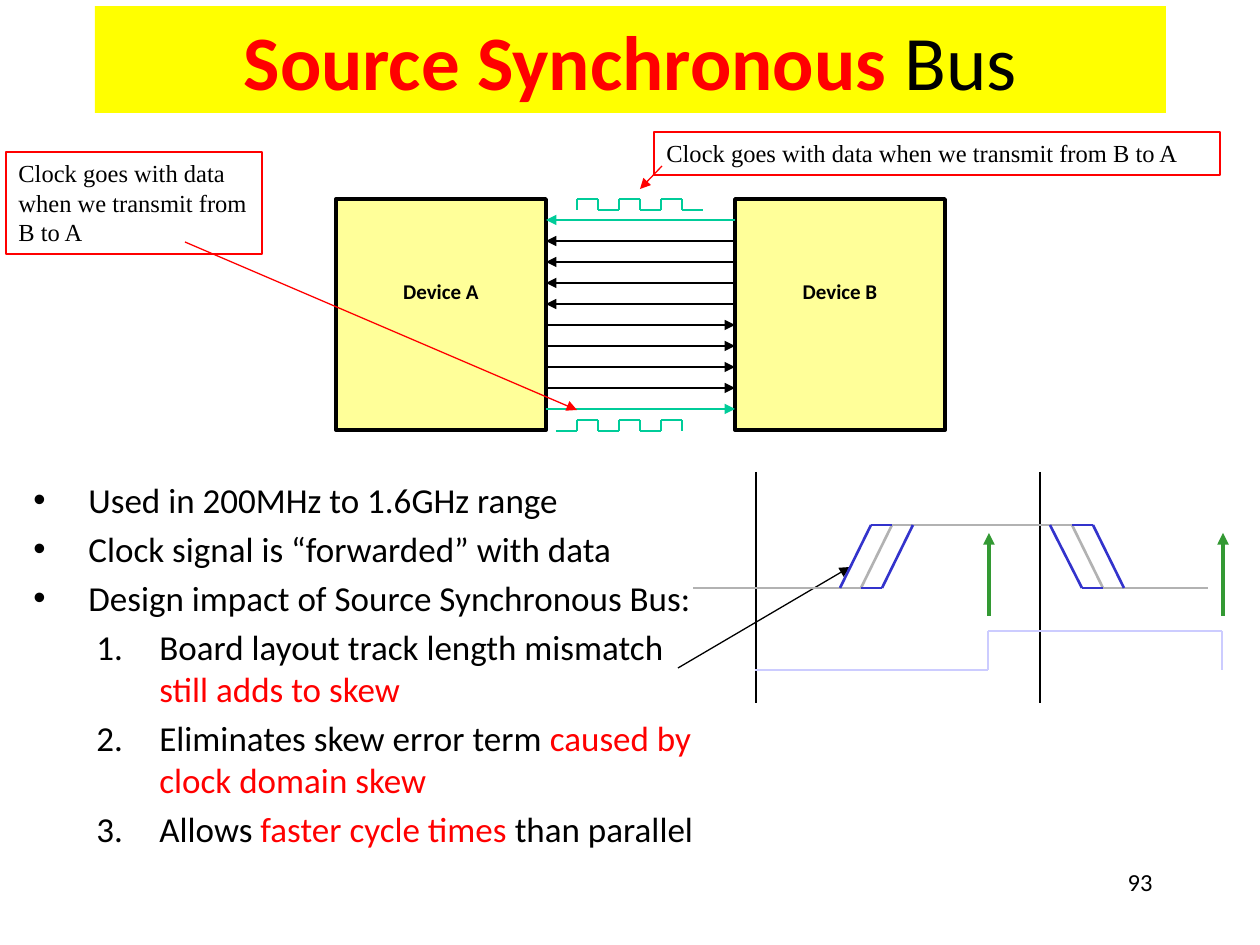
from itertools import pairwise
from lxml.etree import SubElement
from pptx import Presentation
from pptx.dml.color import RGBColor
from pptx.enum.shapes import MSO_CONNECTOR, MSO_SHAPE
from pptx.enum.text import MSO_ANCHOR, PP_ALIGN
from pptx.oxml.ns import qn
from pptx.util import Pt

SCALE = 914400 / 126  # EMU per px
BLACK, RED, TEAL = "000000", "FF0000", "00CC99"
GREY, BLUE, GREEN, LILAC = "B2B2B2", "3333CC", "339933", "CCCCFF"


def px(*vals):
    return [round(v * SCALE) for v in vals]


def trace(points, hue, width, arrow=False):
    """Join the points with straight lines; an arrowhead goes at each end point."""
    for start, end in pairwise(points):
        wire = slide.shapes.add_connector(MSO_CONNECTOR.STRAIGHT, *px(*start, *end))
        wire.line.color.rgb = RGBColor.from_string(hue)
        wire.line.width = Pt(width)
        if arrow:
            SubElement(wire.line._get_or_add_ln(), qn("a:tailEnd"), type="triangle")
        SubElement(wire._element.spPr, qn("a:effectLst"))


deck = Presentation()
deck.slide_width, deck.slide_height = px(1260, 945)
slide = deck.slides.add_slide(deck.slide_layouts[5])

# Title
title = slide.shapes.title
title.left, title.top, title.width, title.height = px(95, 6, 1071, 107)
title.fill.solid()
title.fill.fore_color.rgb = RGBColor.from_string("FFFF00")
title.text_frame.vertical_anchor = MSO_ANCHOR.MIDDLE
para = title.text_frame.paragraphs[0]
para.alignment = PP_ALIGN.CENTER
for text, hue, bold in [("Source Synchronous ", RED, True), ("Bus", BLACK, False)]:
    run = para.add_run()
    run.text = text
    run.font.name, run.font.size, run.font.bold = "Calibri", Pt(44), bold
    run.font.color.rgb = RGBColor.from_string(hue)

# Devices
for name, left in [("Device A", 336), ("Device B", 735)]:
    box = slide.shapes.add_shape(MSO_SHAPE.RECTANGLE, *px(left, 199, 210, 231))
    box.shadow.inherit = False
    box.fill.solid()
    box.fill.fore_color.rgb = RGBColor.from_string("FFFF99")
    box.line.color.rgb = RGBColor.from_string(BLACK)
    box.line.width = Pt(2.25)
    frame = box.text_frame
    frame.text = name
    frame.word_wrap = False
    frame.vertical_anchor = MSO_ANCHOR.MIDDLE
    frame.margin_bottom = px(54)[0]
    frame.paragraphs[0].alignment = PP_ALIGN.CENTER
    font = frame.paragraphs[0].runs[0].font
    font.name, font.size, font.bold = "Calibri", Pt(12), True
    font.color.rgb = RGBColor.from_string(BLACK)

# Bus wires: five towards A, five towards B, the outer ones are clocks
for i in range(10):
    y = 220 + 21 * i
    ends = [(735, y), (546, y)] if i < 5 else [(546, y), (735, y)]
    trace(ends, TEAL if i in (0, 9) else BLACK, 1.5, True)

# Clock pulses above and below the wires
for high, low, first, last in [(199, 210, [], [(703, 210)]),
                               (420, 431, [(556, 431)], [])]:
    pulse = [point for x in (577, 619, 661)
             for point in [(x, low), (x, high), (x + 21, high), (x + 21, low)]]
    trace(first + pulse + last, TEAL, 0.75)

# Bullets and numbered points
body = slide.shapes.add_textbox(*px(21, 472, 743, 462)).text_frame
body.word_wrap = True
points = [
    (0, [("Used in 200MHz to 1.6GHz range", BLACK)]),
    (0, [("Clock signal is “forwarded” with data", BLACK)]),
    (0, [("Design impact of Source Synchronous Bus:", BLACK)]),
    (1, [("Board layout track length mismatch ", BLACK), ("\n", RED),
         ("still adds to skew", RED)]),
    (1, [("Eliminates skew error term ", BLACK),
         ("caused by clock domain skew", RED)]),
    (1, [("Allows ", BLACK), ("faster cycle times ", RED),
         ("than parallel", BLACK)]),
]
for i, (level, parts) in enumerate(points):
    para = body.add_paragraph() if i else body.paragraphs[0]
    para.level = level
    para.space_before = Pt(4)
    props = para._p.get_or_add_pPr()
    margin, indent = px(126, -63) if level else px(55, -55)
    props.set("marL", str(margin))
    props.set("indent", str(indent))
    if level:
        SubElement(props, qn("a:buFont"), typeface="+mj-lt")
        SubElement(props, qn("a:buAutoNum"), type="arabicPeriod")
    else:
        SubElement(props, qn("a:buFont"), typeface="Arial")
        SubElement(props, qn("a:buChar"), char="•")
    for text, hue in parts:
        if text == "\n":
            para.add_line_break()
            continue
        run = para.add_run()
        run.text = text
        run.font.name, run.font.size = "Calibri", Pt(20)
        run.font.color.rgb = RGBColor.from_string(hue)

# Timing diagram
for x in (756, 1040):
    trace([(x, 472), (x, 703)], BLACK, 0.75)
trace([(678, 668), (850, 567)], BLACK, 0.75, True)
trace([(755, 670), (988, 670), (988, 631), (1222, 631), (1222, 670)], LILAC, 0.75)
for x in (989, 1223):
    trace([(x, 616), (x, 533)], GREEN, 2.25, True)
trace([(693, 588), (861, 588), (892, 525), (1072, 525), (1103, 588), (1208, 588)],
      GREY, 1.5)
for edge in [[(840, 588), (871, 525), (892, 525)],
             [(861, 588), (882, 588), (913, 525)],
             [(1072, 525), (1093, 525), (1124, 588)],
             [(1050, 525), (1082, 588), (1103, 588)]]:
    trace(edge, BLUE, 1.5)

# Callouts
for spot in [(6, 152, 256, 102), (654, 132, 566, 43)]:
    note = slide.shapes.add_textbox(*px(*spot))
    note.line.color.rgb = RGBColor.from_string(RED)
    note.line.width = Pt(0.75)
    note.text_frame.word_wrap = True
    note.text_frame.text = "Clock goes with data when we transmit from B to A"
    font = note.text_frame.paragraphs[0].runs[0].font
    font.name, font.size = "Times New Roman", Pt(14)
    font.color.rgb = RGBColor.from_string(BLACK)
trace([(185, 242), (577, 410)], RED, 0.75, True)
trace([(662, 166), (640, 189)], RED, 0.75, True)

# Page number
page = slide.shapes.add_textbox(*px(903, 861, 262, 63)).text_frame
page.word_wrap = True
page.text = "93"
page.paragraphs[0].alignment = PP_ALIGN.RIGHT
font = page.paragraphs[0].runs[0].font
font.name, font.size = "Calibri", Pt(14)
font.color.rgb = RGBColor.from_string(BLACK)

deck.save("out.pptx")
